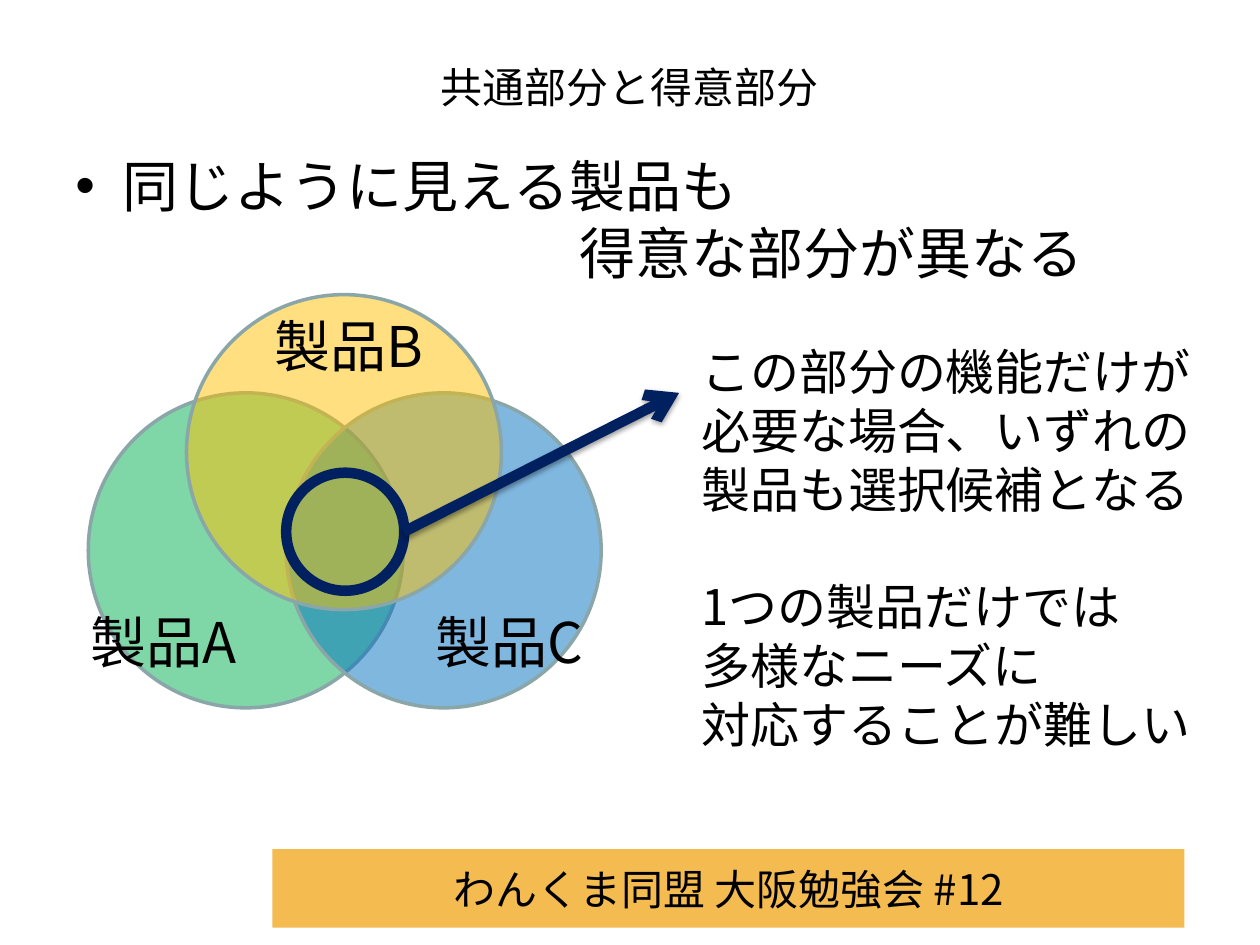
from lxml import etree
from pptx import Presentation
from pptx.dml.color import RGBColor
from pptx.enum.shapes import MSO_CONNECTOR, MSO_SHAPE
from pptx.enum.text import MSO_ANCHOR, PP_ALIGN
from pptx.oxml.ns import qn
from pptx.util import Cm, Pt

OVAL, RECT = MSO_SHAPE.OVAL, MSO_SHAPE.RECTANGLE
STRAIGHT = MSO_CONNECTOR.STRAIGHT
LEFT, CENTER = PP_ALIGN.LEFT, PP_ALIGN.CENTER
TOP, MIDDLE = MSO_ANCHOR.TOP, MSO_ANCHOR.MIDDLE


def color(hex_text):
    return RGBColor.from_string(hex_text)


def add_xml(parent, tag, **attributes):
    return etree.SubElement(parent, qn(tag), attributes)


class SlideBuilder:
    font = "Noto Sans CJK JP"
    ink = "000000"
    navy = "002060"
    outline = "8AA6A8"

    def __init__(self, deck):
        self.page = deck.slides.add_slide(deck.slide_layouts[6])

    def shape(self, kind, left, top, width, height, fill=None, opacity=100,
              line=None, weight=2):
        shape = self.page.shapes.add_shape(
            kind, Cm(left), Cm(top), Cm(width), Cm(height))
        shape.shadow.inherit = False
        if fill:
            shape.fill.solid()
            shape.fill.fore_color.rgb = color(fill)
            if opacity < 100:
                rgb = shape._element.spPr.find(f".//{qn('a:srgbClr')}")
                add_xml(rgb, "a:alpha", val=str(opacity * 1000))
        else:
            shape.fill.background()
        if line:
            shape.line.color.rgb = color(line)
            shape.line.width = Pt(weight)
        else:
            shape.line.fill.background()
        return shape

    def circle(self, left, top, diameter, **style):
        return self.shape(OVAL, left, top, diameter, diameter, **style)

    def arrow(self, start, end, weight):
        """Draw a navy arrow with a soft shadow straight below it."""
        arrow = self.page.shapes.add_connector(
            STRAIGHT, *(Cm(value) for value in start + end))
        arrow.line.color.rgb = color(self.navy)
        arrow.line.width = Pt(weight)
        properties = arrow._element.spPr
        add_xml(properties.find(qn("a:ln")), "a:tailEnd", type="arrow")
        effects = add_xml(properties, "a:effectLst")
        shadow = add_xml(effects, "a:outerShdw", blurRad=str(Pt(3.1)),
                         dist=str(Pt(1.6)), dir="5400000", rotWithShape="0")
        rgb = add_xml(shadow, "a:srgbClr", val=self.ink)
        add_xml(rgb, "a:alpha", val="38000")

    def text_box(self, left, top, width, height):
        return self.page.shapes.add_textbox(
            Cm(left), Cm(top), Cm(width), Cm(height))

    def add_text(self, box, paragraphs, size, align=LEFT, anchor=TOP, gap=0):
        """Fill a box; each paragraph is a list of lines, gap is in points."""
        frame = box.text_frame
        frame.word_wrap = True
        frame.vertical_anchor = anchor
        for index, lines in enumerate(paragraphs):
            para = frame.add_paragraph() if index else frame.paragraphs[0]
            para.alignment = align
            if index and gap:
                para.space_before = Pt(gap)
            for number, line in enumerate(lines):
                if number:
                    para.add_line_break()
                span = para.add_run()
                span.text = line
                span.font.size = Pt(size)
                span.font.name = self.font
                span.font.color.rgb = color(self.ink)
                add_xml(span._r.get_or_add_rPr(), "a:ea", typeface=self.font)
        return frame.paragraphs

    def indent(self, para, left, bullet=None):
        """Indent a paragraph, hanging its bullet at the box edge."""
        properties = para._p.get_or_add_pPr()
        properties.set("marL", str(Cm(left)))
        properties.set("indent", str(-Cm(left) if bullet else 0))
        if bullet:
            add_xml(properties, "a:buFont", typeface="Arial")
            add_xml(properties, "a:buChar", char=bullet)


def main():
    deck = Presentation()
    deck.slide_width, deck.slide_height = Cm(25.4), Cm(19.05)
    slide = SlideBuilder(deck)

    footer = slide.shape(RECT, 5.49, 17.12, 18.39, 1.58, fill="F3BB50")
    slide.add_text(footer, [["わんくま同盟 大阪勉強会 #12"]], 24, CENTER, MIDDLE)

    title = slide.text_box(1.27, 0.76, 22.86, 1.96)
    slide.add_text(title, [["共通部分と得意部分"]], 24, CENTER, MIDDLE)

    body = slide.text_box(1.27, 2.92, 22.86, 3)
    first, second = slide.add_text(
        body, [["同じように見える製品も"], ["得意な部分が異なる"]], 32)
    slide.indent(first, 0.95, "•")
    slide.indent(second, 10.16)

    diameter = 6.35
    for left, top, fill in ((1.78, 7.92, "00B050"), (5.77, 7.92, "0070C0"),
                            (3.76, 5.94, "FFC000")):
        slide.circle(left, top, diameter, fill=fill, opacity=50,
                     line=slide.outline)

    for name, left, top, align in (("製品A", 1.57, 12.12, LEFT),
                                   ("製品B", 4.95, 6.15, CENTER),
                                   ("製品C", 8.53, 12.12, LEFT)):
        label = slide.text_box(left, top, 4.17, 1.62)
        slide.add_text(label, [[name]], 32, align)

    slide.circle(5.77, 9.53, 2.38, line=slide.navy, weight=6)
    slide.arrow((8.14, 10.72), (13.69, 7.92), 6)

    comment = slide.text_box(13.89, 6.76, 10.52, 8.64)
    slide.add_text(comment, [
        ["この部分の機能だけが必要な場合、いずれの製品も選択候補となる"],
        ["1つの製品だけでは", "多様なニーズに", "対応することが難しい"],
    ], 28, gap=33.6)

    deck.save("out.pptx")


if __name__ == "__main__":
    main()
